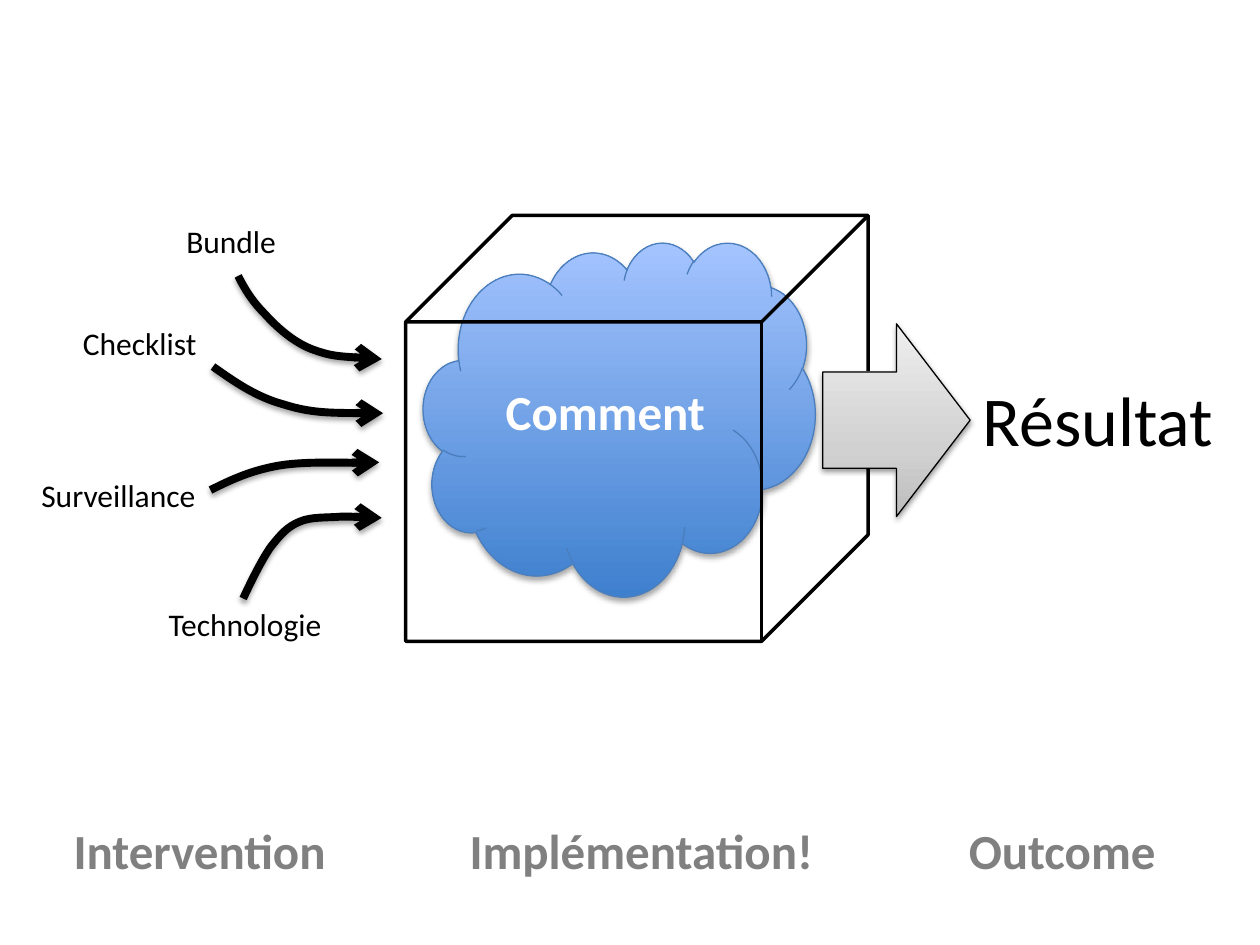
"""Build the slide on how implementation turns interventions into a result."""
from lxml import etree
from pptx import Presentation, oxml, util as u
from pptx.dml.color import RGBColor
from pptx.enum import shapes, text
from pptx.oxml.ns import nsdecls, qn

ink = RGBColor.from_string
prs = Presentation()
cell = u.Inches(1)
prs.slide_width, prs.slide_height = 10 * cell, int(7.5 * cell)
slide = prs.slides.add_slide(prs.slide_layouts[6])
parts = slide.shapes


def write(frame, words, size=18, color="000000", bold=False, align=text.PP_ALIGN.LEFT):
    paragraph = frame.paragraphs[0]
    paragraph.alignment = align
    run = paragraph.add_run()
    run.text = words
    run.font.name, run.font.size, run.font.bold = "Calibri", u.Pt(size), bold
    run.font.color.rgb = ink(color)


def paint(part, stops=(), line="000000", width=0.75, alpha=0, drop=1.8):
    part.fill.background()
    part.line.color.rgb, part.line.width = ink(line), u.Pt(width)
    part.shadow.inherit = False
    props = part._element.spPr
    if stops:
        marks = "".join(
            f'<a:gs pos="{at * 1000}"><a:srgbClr val="{ink(color)}"/></a:gs>' for at, color in stops)
        props.replace(props.find(qn("a:noFill")), oxml.parse_xml(
            f'<a:gradFill {nsdecls("a")} rotWithShape="1"><a:gsLst>{marks}</a:gsLst>'
            '<a:lin ang="16200000" scaled="0"/></a:gradFill>'))
    if alpha:
        props.find(qn("a:effectLst")).append(oxml.parse_xml(
            f'<a:outerShdw {nsdecls("a")} blurRad="{u.Pt(3.1)}" dist="{u.Pt(drop)}" dir="5400000" '
            f'rotWithShape="0"><a:srgbClr val="000000"><a:alpha val="{alpha * 1000}"/></a:srgbClr>'
            '</a:outerShdw>'))


input_curves = [
    [(189, 219), (194, 229), (200, 239), (210, 249), (219, 259), (232, 271),
     (247, 277), (263, 283), (283, 284), (303, 285)],
    [(193, 475), (200, 460), (208, 444), (215, 434), (223, 424), (228, 418),
     (238, 414), (247, 410), (260, 411), (271, 410), (282, 410), (292, 411), (303, 411)],
    [(167, 389), (183, 381), (198, 374), (219, 370), (240, 366), (279, 368),
     (292, 367), (306, 367), (303, 367), (301, 367)],
    [(169, 291), (186, 303), (203, 315), (225, 321), (247, 328), (276, 328), (304, 328)],
]
for start, *controls in input_curves:
    outline = parts.build_freeform(*start, scale=cell / 100)
    outline.add_line_segments(controls, close=False)
    curve = outline.convert_to_shape()
    paint(curve, width=4.5, alpha=35)
    etree.SubElement(curve.line._ln, qn("a:tailEnd"), type="arrow")
    route = next(curve._element.iter(qn("a:path")))
    steps = route.findall(qn("a:lnTo"))
    for first in range(0, len(steps), 3):
        bend = etree.SubElement(route, qn("a:cubicBezTo"))
        for step in steps[first:first + 3]:
            bend.append(step[0])
            route.remove(step)

process = [
    (shapes.MSO_SHAPE.CLOUD, (3.36, 1.92, 3.11, 2.81),
     dict(stops=[(0, "3F80CE"), (100, "A4C4FF")], line="4B7EBC", alpha=35), "Comment"),
    (shapes.MSO_SHAPE.CUBE, (3.22, 1.71, 3.67, 3.38), dict(width=2), ""),
    (shapes.MSO_SHAPE.RIGHT_ARROW, (6.53, 2.57, 1.17, 1.53),
     dict(stops=[(0, "BDBDBD"), (35, "D1D1D1"), (100, "EEEEEE")], alpha=38, drop=1.6), ""),
]
for kind, place, look, words in process:
    stage = parts.add_shape(kind, *(int(n * cell) for n in place))
    paint(stage, **look)
    if words:
        stage.text_frame.vertical_anchor = text.MSO_ANCHOR.MIDDLE
        write(stage.text_frame, words, 28, "FFFFFF", True, text.PP_ALIGN.CENTER)

heading = dict(size=28, color="808080", bold=True, align=text.PP_ALIGN.CENTER)
labels = [
    ("Bundle", (1.38, 1.71, 0.92, 0.4), {}),
    ("Checklist", (0.56, 2.52, 1.11, 0.4), {}),
    ("Surveillance", (0.23, 3.73, 1.44, 0.4), {}),
    ("Technologie", (1.24, 4.75, 1.43, 0.4), {}),
    ("Résultat", (7.7, 2.94, 2.05, 0.77), dict(size=40)),
    ("Intervention", (0.47, 6.46, 2.23, 0.57), heading),
    ("Implémentation!", (3.61, 6.46, 2.96, 0.57), heading),
    ("Outcome", (7.58, 6.46, 1.7, 0.57), heading),
]
for words, place, look in labels:
    frame = parts.add_textbox(*(int(n * cell) for n in place)).text_frame
    frame.word_wrap = False
    frame.auto_size = text.MSO_AUTO_SIZE.SHAPE_TO_FIT_TEXT
    write(frame, words, **look)

prs.save("out.pptx")
